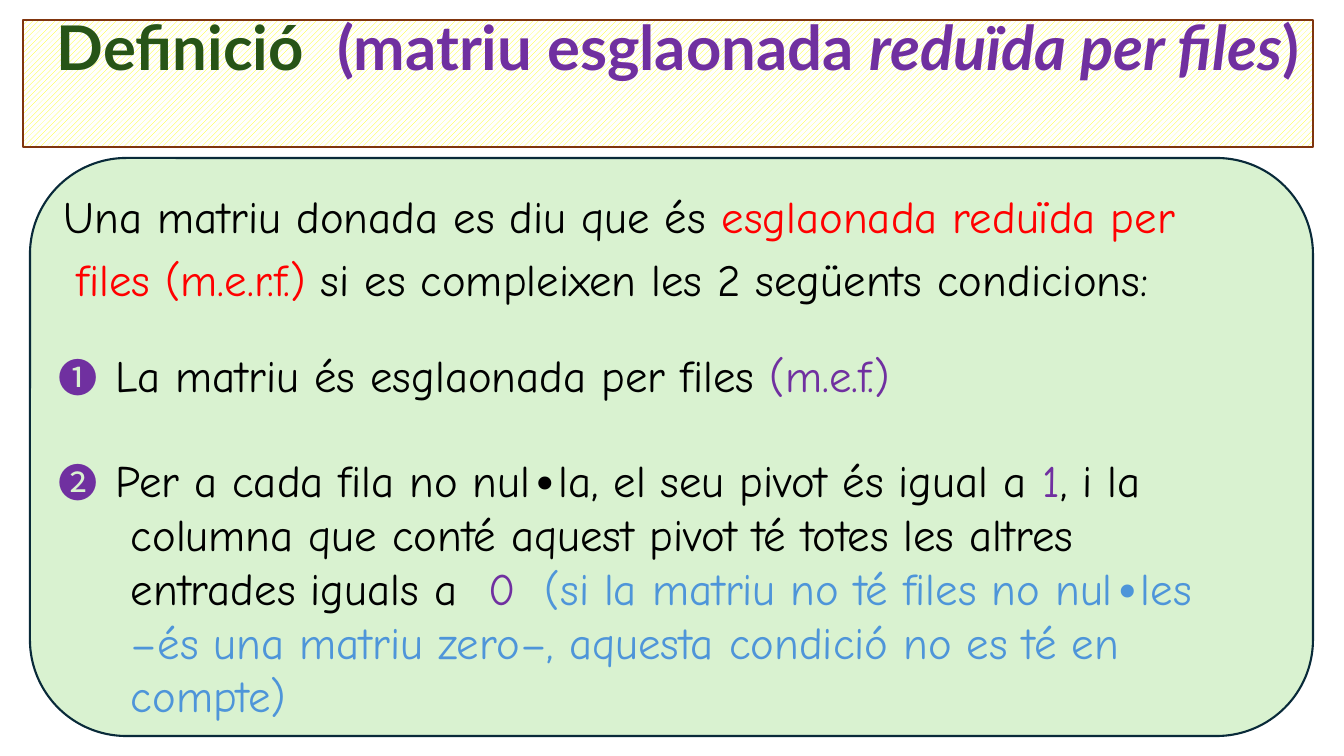
import pptx
import pptx.util
import pptx.dml.color
import pptx.enum.dml
import pptx.enum.shapes
import pptx.enum.text
import pptx.oxml.ns
import lxml.etree

RGBColor = pptx.dml.color.RGBColor
WHITE = RGBColor(0xFF, 0xFF, 0xFF)
BLACK = RGBColor(0x00, 0x00, 0x00)
YELLOW = RGBColor(0xFF, 0xFF, 0x00)
BROWN = RGBColor(0x80, 0x35, 0x0E)
PALE_GREEN = RGBColor(0xD9, 0xF2, 0xD0)
DARK_GREEN = RGBColor(0x27, 0x54, 0x17)
NAVY = RGBColor(0x09, 0x2A, 0x39)
PURPLE = RGBColor(0x70, 0x30, 0xA0)
RED = RGBColor(0xFF, 0x00, 0x00)
BLUE = RGBColor(0x4E, 0x95, 0xD9)

TITLE = ("Lato", 44)
BODY = ("Comic Neue", 32)
MARK = ("Noto Sans CJK JP", 28)
PX = 914400 / 100.8
MARK_TAB, REST_TAB = 57, 72


def px(n):
    return pptx.util.Emu(round(n * PX))


def fill_line(p, runs, tabs=()):
    """Add (text, (font, size), colour) runs to p, with tab stops in px."""
    if tabs:
        tab_list = lxml.etree.SubElement(
            p._p.get_or_add_pPr(), pptx.oxml.ns.qn("a:tabLst"))
        for pos in tabs:
            lxml.etree.SubElement(tab_list, pptx.oxml.ns.qn("a:tab"),
                                  pos=str(px(pos)), algn="l")
    for text, (face, size), color in runs:
        r = p.add_run()
        r.text = text
        r.font.size = pptx.util.Pt(size)
        r.font.color.rgb = color
        r.font.name = face
        lxml.etree.SubElement(r.font._element, pptx.oxml.ns.qn("a:ea"), typeface=face)


prs = pptx.Presentation()
prs.slide_width, prs.slide_height = px(1344), px(756)
slide = prs.slides.add_slide(prs.slide_layouts[6])
shapes = slide.shapes
SHAPE = pptx.enum.shapes.MSO_SHAPE

# Green panel
panel = shapes.add_shape(SHAPE.ROUNDED_RECTANGLE, px(30), px(158), px(1283), px(578))
panel.shadow.inherit = False
panel.fill.solid()
panel.fill.fore_color.rgb = PALE_GREEN
panel.line.color.rgb = NAVY
panel.line.width = pptx.util.Pt(1.5)

# Title on a hatched band
title = shapes.add_shape(SHAPE.RECTANGLE, px(23), px(20), px(1290), px(127))
title.shadow.inherit = False
title.fill.patterned()
title.fill.pattern = pptx.enum.dml.MSO_PATTERN.WIDE_UPWARD_DIAGONAL
title.fill.fore_color.rgb = YELLOW
title.fill.back_color.rgb = WHITE
title.line.color.rgb = BROWN
title.line.width = pptx.util.Pt(2)
tf = title.text_frame
tf.word_wrap = True
tf.vertical_anchor = pptx.enum.text.MSO_ANCHOR.TOP
tf.margin_left, tf.margin_right = px(34), px(0)
tf.margin_top = px(-3)
p = tf.paragraphs[0]
p.alignment = pptx.enum.text.PP_ALIGN.LEFT
p.line_spacing = 0.9
fill_line(p, [
    ("Definició\t", TITLE, DARK_GREEN),
    ("(matriu esglaonada ", TITLE, PURPLE),
    ("reduïda per files", TITLE, PURPLE),
    (")", TITLE, PURPLE),
], [280])
for r in p.runs:
    r.font.bold = True
p.runs[2].font.italic = True

# Text blocks: left, top, width, height, line spacing, space before, lines
intro = [
    ([("Una matriu donada es diu que és ", BODY, BLACK),
      ("esglaonada reduïda per", BODY, RED)], [], 16),
    ([("files (m.e.r.f.) ", BODY, RED),
      ("si es compleixen les 2 següents condicions:", BODY, BLACK)], [], 29),
]
first = [
    ([("➊\t", MARK, PURPLE),
      ("La matriu és esglaonada per files ", BODY, BLACK),
      ("(m.e.f.)", BODY, PURPLE)], [MARK_TAB], 0),
]
second = [
    ([("➋\t", MARK, PURPLE),
      ("Per a cada fila no nul∙la, el seu pivot és igual a ", BODY, BLACK),
      ("1", BODY, PURPLE),
      (", i la", BODY, BLACK)], [MARK_TAB], 0),
    ([("columna que conté aquest pivot té totes les altres", BODY, BLACK)], [], REST_TAB),
    ([("\tentrades iguals a\t", BODY, BLACK),
      ("0\t", BODY, PURPLE),
      ("(si la matriu no té files no nul∙les", BODY, BLUE)], [REST_TAB, 430, 486], 0),
    ([("–és una matriu zero–, aquesta condició no es té en", BODY, BLUE)], [], REST_TAB),
    ([("compte)", BODY, BLUE)], [], REST_TAB),
]
blocks = [
    (38, 190, 1255, 130, 0.9, 10, intro),
    (49, 343, 1187, 68, 1.0, 0, first),
    (49, 448, 1255, 284, 1.0, 0, second),
]
for left, top, width, height, spacing, before, lines in blocks:
    tf = shapes.add_textbox(px(left), px(top), px(width), px(height)).text_frame
    tf.word_wrap = True
    for i, (runs, tabs, indent) in enumerate(lines):
        p = tf.add_paragraph() if i else tf.paragraphs[0]
        p.line_spacing = spacing
        p.space_before = pptx.util.Pt(before)
        if indent:
            p._p.get_or_add_pPr().set("marL", str(px(indent)))
        fill_line(p, runs, tabs)

prs.save("out.pptx")
